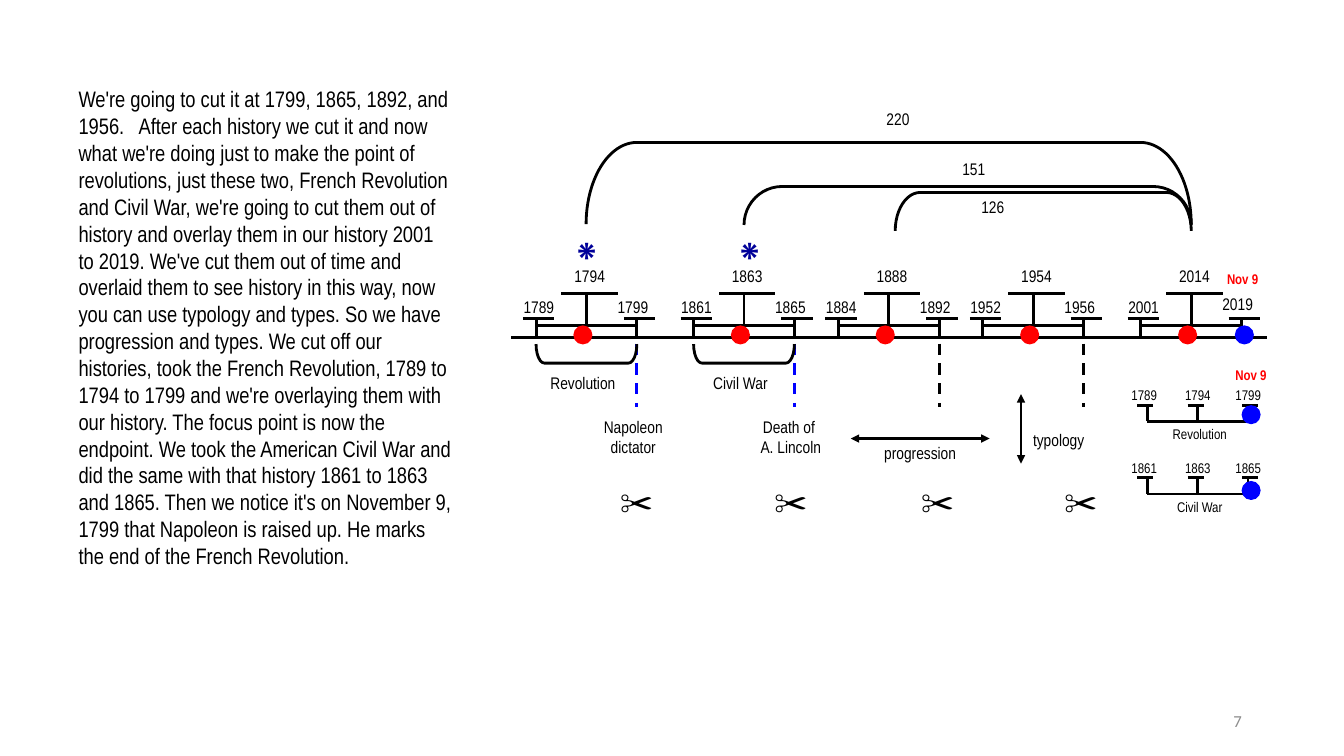
from dataclasses import dataclass

from lxml.etree import SubElement
from pptx import Presentation
from pptx.dml.color import RGBColor
from pptx.enum.dml import MSO_LINE_DASH_STYLE as DASH
from pptx.enum.shapes import MSO_CONNECTOR, MSO_SHAPE
from pptx.enum.text import MSO_ANCHOR, PP_ALIGN
from pptx.oxml.ns import qn
from pptx.util import Cm, Pt


@dataclass(frozen=True)
class Theme:
    black: str = "000000"
    red: str = "FF0000"
    blue: str = "0000FF"
    navy: str = "000099"
    gray: str = "8C8C8C"
    font: str = "Arial Narrow"
    small: int = 10
    label: int = 12
    body: int = 16
    scissors: int = 24
    star: int = 26
    stroke: int = 2


T = Theme()
SPAN = 2.54  # length of every history on the time line
DOT = 0.48
STARTS = (13.51, 17.48, 21.13, 24.77, 28.75)
HISTORIES = (("1789", "1794", "1799"), ("1861", "1863", "1865"),
             ("1884", "1888", "1892"), ("1952", "1954", "1956"),
             ("2001", "2014", "2019"))
NAMES = ("Revolution", "Civil War")
AXIS_Y = 8.51
BODY = (
    "We're going to cut it at 1799, 1865, 1892, and 1956.   After each history "
    "we cut it and now what we're doing just to make the point of revolutions, "
    "just these two, French Revolution and Civil War, we're going to cut them out "
    "of history and overlay them in our history 2001 to 2019. We've cut them out "
    "of time and overlaid them to see history in this way, now you can use "
    "typology and types. So we have progression and types. We cut off our "
    "histories, took the French Revolution, 1789 to 1794 to 1799 and we're "
    "overlaying them with our history. The focus point is now the endpoint. We "
    "took the American Civil War and did the same with that history 1861 to 1863 "
    "and 1865. Then we notice it's on November 9, 1799 that Napoleon is raised "
    "up. He marks the end of the French Revolution.")


def text(shapes, x, y, w, h, *lines, size=T.label, color=T.black, font=T.font,
         bold=False, align=PP_ALIGN.CENTER, inset=0.1):
    tf = shapes.add_textbox(Cm(x), Cm(y), Cm(w), Cm(h)).text_frame
    tf.word_wrap = True
    if inset is not None:
        tf.margin_left = tf.margin_right = Cm(inset)
        tf.margin_top = tf.margin_bottom = Cm(inset)
    for i, line in enumerate(lines):
        p = tf.add_paragraph() if i else tf.paragraphs[0]
        p.alignment = align
        r = p.add_run()
        r.text = line
        r.font.name, r.font.size, r.font.bold = font, Pt(size), bold
        r.font.color.rgb = RGBColor.from_string(color)
    return tf


def line(shapes, x1, y1, x2, y2, color=T.black, dashed=False, arrows=False):
    c = shapes.add_connector(MSO_CONNECTOR.STRAIGHT, Cm(x1), Cm(y1), Cm(x2), Cm(y2))
    c.line.width = Pt(T.stroke)
    c.line.color.rgb = RGBColor.from_string(color)
    if dashed:
        c.line.dash_style = DASH.DASH
    if arrows:
        for end in ("a:headEnd", "a:tailEnd"):
            SubElement(c.line._get_or_add_ln(), qn(end), type="triangle")
    SubElement(c._element.spPr, qn("a:effectLst"))


def dot(shapes, x, y, color):
    d = shapes.add_shape(MSO_SHAPE.OVAL, Cm(x), Cm(y), Cm(DOT), Cm(DOT))
    d.shadow.inherit = False
    d.fill.solid()
    d.fill.fore_color.rgb = RGBColor.from_string(color)
    d.line.fill.background()


def bracket(shapes, x, y, w, h, rotation, curve):
    """Turn an upright bracket so that it fills the given horizontal box."""
    b = shapes.add_shape(MSO_SHAPE.LEFT_BRACKET, Cm(x + (w - h) / 2),
                         Cm(y + (h - w) / 2), Cm(h), Cm(w))
    b.rotation = rotation
    b.adjustments[0] = curve
    b.shadow.inherit = False
    b.fill.background()
    b.line.width = Pt(T.stroke)
    b.line.color.rgb = RGBColor.from_string(T.black)


def history(shapes, x, y, years, end_lift=0):
    """Draw one history whose start lies at x on the axis at y."""
    first, middle, last = years
    mid_x, end_x = x + SPAN / 2, x + SPAN
    line(shapes, mid_x, y - 1.12, mid_x, y)
    line(shapes, x + 0.64, y - 1.12, x + 2.06, y - 1.12)
    for tick_x in (x, end_x):
        line(shapes, tick_x, y - 0.48, tick_x, y)
        line(shapes, tick_x - 0.33, y - 0.48, tick_x + 0.46, y - 0.48)
    line(shapes, x, y - 0.31, end_x, y - 0.31)
    text(shapes, x + 0.64, y - 1.91, 1.42, 0.79, middle)
    text(shapes, x - 0.64, y - 1.12, 1.42, 0.64, first)
    text(shapes, x + 1.73, y - 1.12 - end_lift, 1.42, 0.64, last)
    dot(shapes, x + 0.94, y - 0.31, T.red)


def time_line(shapes, x, y, w):
    line(shapes, x, y, x + w, y)
    for start, years in zip(STARTS, HISTORIES):
        history(shapes, start, y, years, end_lift=0.1 if years[-1] == "2019" else 0)
    dot(shapes, 31.12, y - 0.31, T.blue)
    text(shapes, 30.53, y - 1.8, 1.57, 0.79, "Nov 9", size=T.small, color=T.red, bold=True)


def cuts(shapes, y):
    """Mark the cut after each of the first four histories."""
    for i, (start, scissors_x) in enumerate(zip(STARTS, (15.52, 19.41, 23.11, 26.72))):
        line(shapes, start + SPAN, y + 0.15, start + SPAN, y + 1.75,
             color=T.blue if i < 2 else T.black, dashed=True)
        text(shapes, scissors_x, y + 3.54, 1.75, 1.42, "✂", size=T.scissors,
             font="Arial", align=PP_ALIGN.LEFT)
    ends = (("Napoleon", "dictator"), ("Death of ", "A. Lincoln"))
    for start, star_x, name, end in zip(STARTS, (14.15, 18.26), NAMES, ends):
        bracket(shapes, start, y + 0.16, SPAN, 0.48, 270, 0.44)
        text(shapes, start + 0.06, y + 0.79, 2.24, 0.79, name)
        text(shapes, start + 1.42, y + 1.9, 2.06, 1.27, *end)
        text(shapes, star_x, y - 2.85, 1.27, 0.97, "⁕", size=T.star,
             color=T.navy, font="Times New Roman", bold=True)


def year_spans(shapes, right):
    """Arch from earlier histories to the one at the right edge."""
    for x, y, h, curve, label_x, label_y, years in (
            (18.75, 4.7, 0.97, 0.99, 23.83, 3.91, "151"),
            (14.77, 3.59, 2.06, 0.62, 21.92, 2.64, "220"),
            (22.56, 4.85, 0.97, 0.65, 24.31, 4.85, "126")):
        bracket(shapes, x, y, right - x, h, 90, curve)
        text(shapes, label_x, label_y, 1.42, 0.79, years)


def directions(shapes, x, y):
    line(shapes, x, y, x + 3.5, y, arrows=True)
    text(shapes, x + 0.48, y, 2.54, 0.79, "progression")
    line(shapes, x + 4.29, y - 1.12, x + 4.29, y + 0.63, arrows=True)
    text(shapes, x + 4.29, y - 0.31, 1.9, 0.79, "typology")


def overlay(shapes, x, y, years, name, dot_rise):
    """Draw a small copy of a history, with its base line at y."""
    line(shapes, x, y, x + SPAN, y)
    for i, year in enumerate(years):
        tick_x = x + i * SPAN / 2
        cap_x = tick_x - (0.15 if i == 2 else 0.25)
        line(shapes, tick_x, y - 0.41, tick_x, y)
        line(shapes, cap_x, y - 0.41, cap_x + 0.4, y - 0.41)
        text(shapes, tick_x - (0.48 if i else 0.56), y - 0.97, 0.97, 0.56, year, size=T.small)
    text(shapes, x + 0.45, y, 1.75, 0.48, name, size=T.small)
    dot(shapes, x + 2.38, y - dot_rise, T.blue)


def overlays(s, x, y):
    for i, (years, name, rise) in enumerate(zip(HISTORIES, NAMES, (0.41, 0.33))):
        overlay(s.shapes.add_group_shape().shapes, x, y + i * 1.83, years, name, rise)
    text(s.shapes, x + 1.98, y - 1.48, 1.27, 0.76, "Nov 9", size=T.small,
         color=T.red, bold=True)


def main():
    prs = Presentation()
    prs.slide_width, prs.slide_height = Cm(33.87), Cm(19.05)
    s = prs.slides.add_slide(prs.slide_layouts[6])
    text(s.shapes, 1.73, 2.03, 9.96, 13.34, BODY, size=T.body,
         align=PP_ALIGN.LEFT, inset=None)
    time_line(s.shapes, 12.88, AXIS_Y, 19.05)
    cuts(s.shapes, AXIS_Y)
    year_spans(s.shapes, 30.02)
    directions(s.shapes, 21.44, 11.05)
    overlays(s, 28.91, 10.62)
    number = text(s.shapes, 23.93, 17.65, 7.62, 1.02, "7", color=T.gray,
                  font="Calibri", align=PP_ALIGN.RIGHT, inset=None)
    number.vertical_anchor = MSO_ANCHOR.MIDDLE
    prs.save("out.pptx")


if __name__ == "__main__":
    main()
